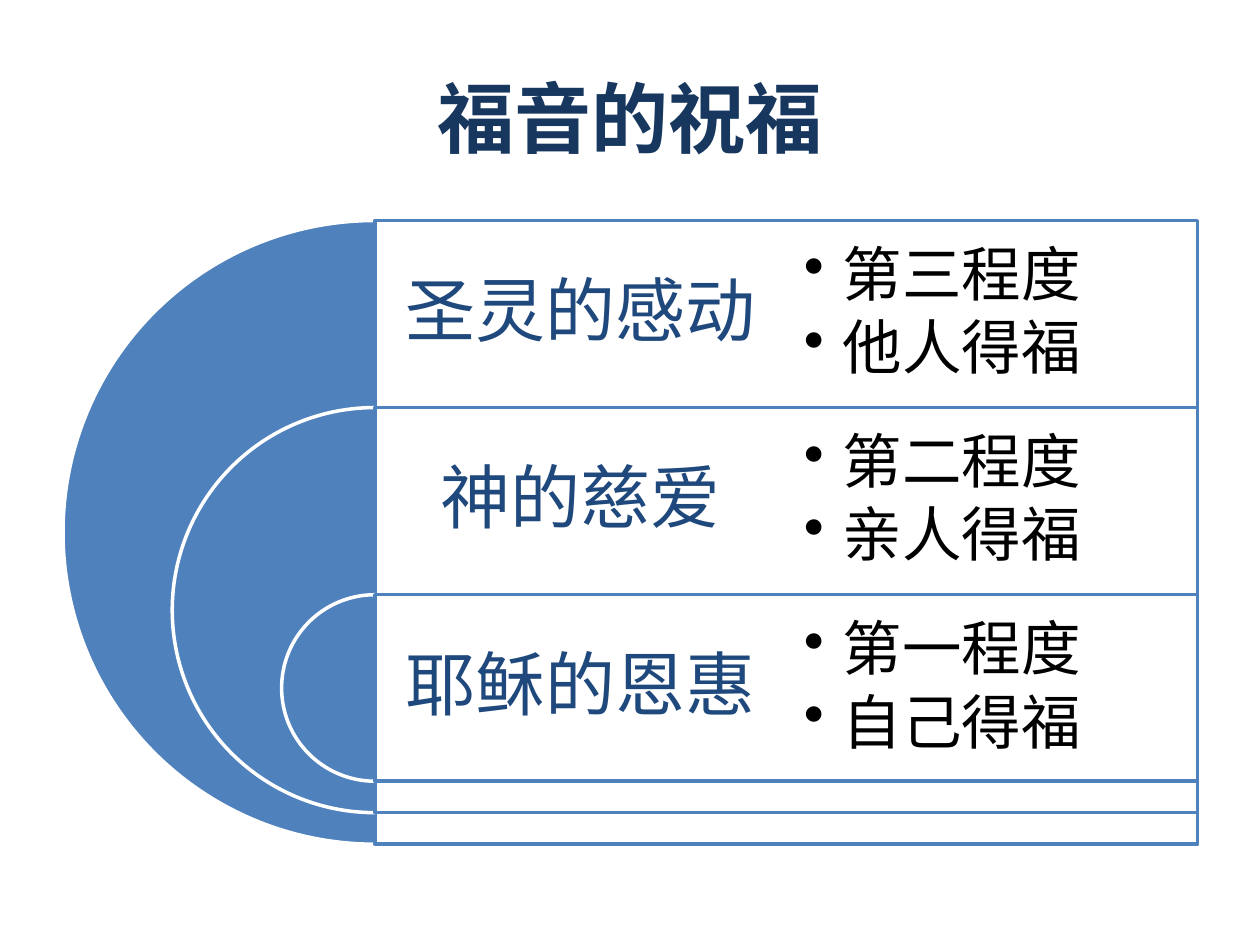
import pptx
import pptx.util
import pptx.dml.color
import pptx.enum.shapes
import pptx.enum.text
import pptx.oxml.ns
from lxml import etree

Inches, Pt = pptx.util.Inches, pptx.util.Pt
SHAPES = pptx.enum.shapes.MSO_SHAPE
ALIGN = pptx.enum.text.PP_ALIGN
qn = pptx.oxml.ns.qn


def color(hex_code):
    return pptx.dml.color.RGBColor.from_string(hex_code)


def add_text(page, left, top, inset, lines, size, hex_code, after):
    """Add a middle-anchored cell of text and return its paragraphs."""
    box = page.shapes.add_textbox(Inches(left), Inches(top), Inches(CELL_WIDTH), Inches(ROW))
    frame = box.text_frame
    frame.word_wrap = True
    frame.vertical_anchor = pptx.enum.text.MSO_ANCHOR.MIDDLE
    frame.margin_left = frame.margin_right = Inches(inset)
    frame.margin_top = frame.margin_bottom = Inches(inset)
    frame.text = "\n".join(lines)
    for para in frame.paragraphs:
        para.font.size = Pt(size)
        para.font.name = "Calibri"
        para.font.color.rgb = color(hex_code)
        para.line_spacing = 0.9
        para.space_before = Pt(0)
        # Space after as a percentage of the text size
        para.space_after = Pt(0)
        spacing = para._p.pPr.find(qn("a:spcAft"))
        spacing.remove(spacing[0])
        etree.SubElement(spacing, qn("a:spcPct"), val=str(after * 1000))
    return frame.paragraphs


deck = pptx.Presentation()
deck.slide_width, deck.slide_height = Inches(10), Inches(7.5)
page = deck.slides.add_slide(deck.slide_layouts[5])

# Title
title = page.shapes.title
title.left, title.top = Inches(0.5), Inches(0.3)
title.width, title.height = Inches(9), Inches(1.25)
title.text = "福音的祝福"
para = title.text_frame.paragraphs[0]
para.alignment = ALIGN.CENTER
para.font.size = Pt(44)
para.font.bold = True
para.font.name = "Calibri"
para.font.color.rgb = color("17375E")

# Nested half circles, each with a panel to the right of the common axis
AXIS, TOP, BOTTOM = 2.975, 1.75, 6.7
ROW, BOTTOM_STEP = 1.485, 0.25
PANEL_WIDTH = 6.53
CELL_WIDTH = PANEL_WIDTH / 2

rows = [
    ("圣灵的感动", ["第三程度", "他人得福"]),
    ("神的慈爱", ["第二程度", "亲人得福"]),
    ("耶稣的恩惠", ["第一程度", "自己得福"]),
]

for index, (heading, points) in enumerate(rows):
    top = TOP + index * ROW
    size = BOTTOM - index * BOTTOM_STEP - top

    half = page.shapes.add_shape(SHAPES.PIE, Inches(AXIS - size / 2), Inches(top),
                                 Inches(size), Inches(size))
    half.adjustments[0], half.adjustments[1] = 54, 162  # 90 to 270 degrees
    panel = page.shapes.add_shape(SHAPES.RECTANGLE, Inches(AXIS), Inches(top),
                                  Inches(PANEL_WIDTH), Inches(size))
    for shape, fill, line in [(half, "4F81BD", "FFFFFF"), (panel, "FFFFFF", "4F81BD")]:
        shape.shadow.inherit = False
        shape.fill.solid()
        shape.fill.fore_color.rgb = color(fill)
        shape.line.color.rgb = color(line)
        shape.line.width = Pt(2)
    panel_fill = panel._element.spPr.find(qn("a:solidFill"))
    etree.SubElement(panel_fill[0], qn("a:alpha"), val="90000")

    # Heading
    for para in add_text(page, AXIS, top, 0.17, [heading], 40, "1F497D", 35):
        para.alignment = ALIGN.CENTER

    # Bullet points
    for para in add_text(page, AXIS + CELL_WIDTH, top, 0.14, points, 34, "000000", 15):
        para.level = 1
        properties = para._p.pPr
        properties.set("marL", str(Inches(0.31)))
        properties.set("indent", str(-Inches(0.31)))
        bullet = etree.Element(qn("a:buChar"), char="•")
        properties.find(qn("a:spcAft")).addnext(bullet)

deck.save("out.pptx")
